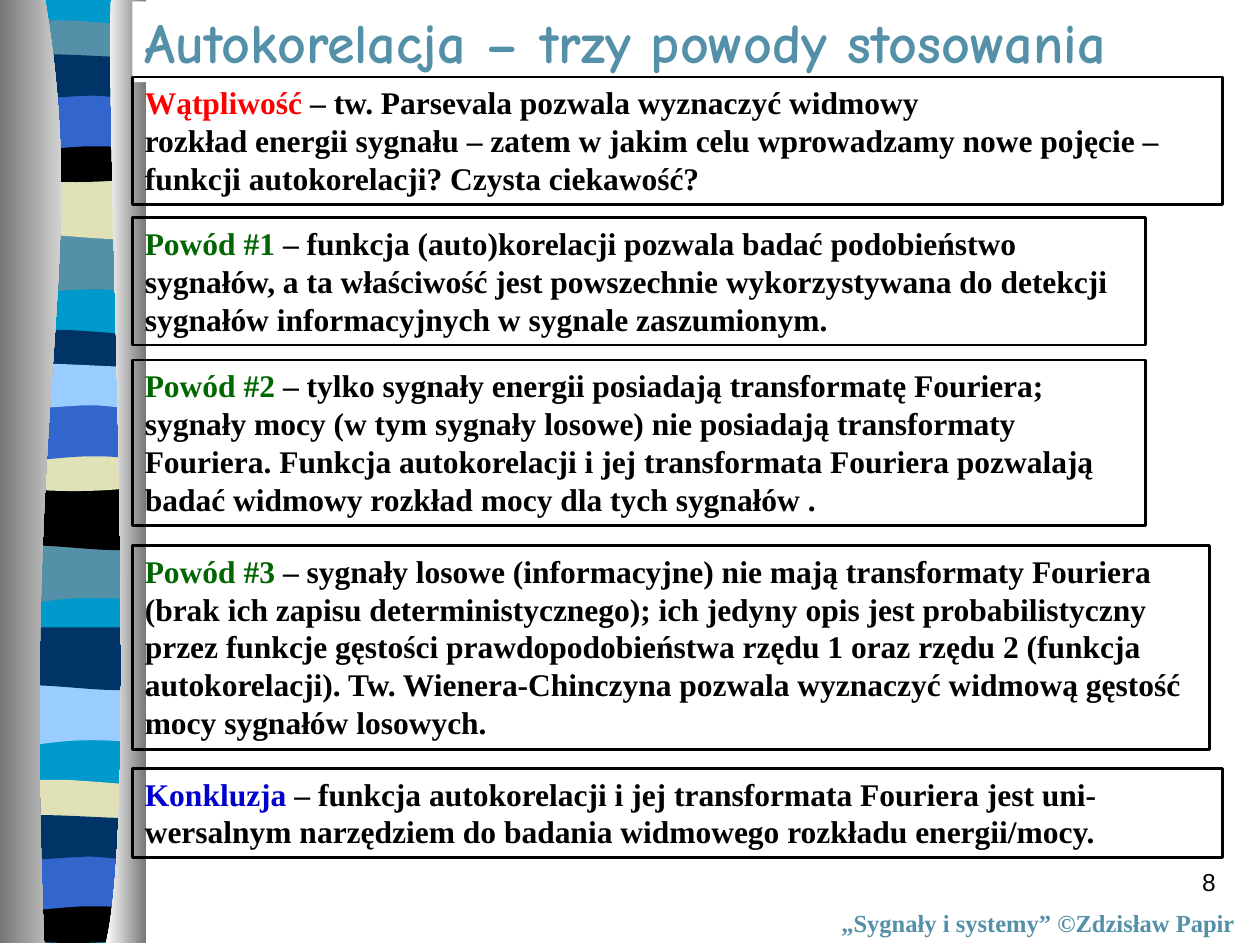
from lxml.etree import SubElement
from pptx import Presentation
from pptx.dml.color import RGBColor
from pptx.enum.text import MSO_AUTO_SIZE as AutoSize, PP_ALIGN as Align
from pptx.oxml.ns import qn
from pptx.util import Cm, Pt

WHITE = RGBColor(0xFF, 0xFF, 0xFF)
BLACK = RGBColor(0, 0, 0)
GREY = RGBColor(0x76, 0x76, 0x76)
CYAN = RGBColor(0x00, 0x99, 0xCC)
TEAL = RGBColor(0x54, 0x90, 0xA8)
SAND = RGBColor(0xE1, 0xE1, 0xB7)
BLUE = RGBColor(0x33, 0x66, 0xCC)
NAVY = RGBColor(0x00, 0x33, 0x66)
SKY = RGBColor(0x99, 0xCC, 0xFF)
RED = RGBColor(0xFF, 0, 0)
GREEN = RGBColor(0, 0x66, 0)
INDIGO = RGBColor(0, 0, 0xCC)

SERIF = "Times New Roman"
HEIGHT = 19.02  # height of the ornament, cm
WIDTH = 2.75  # width of a stripe, cm
FLAT = [(0, 0), (WIDTH, 0)]

# Stripe outlines in cm: top edge left to right, bottom edge right to left.
# Edges of more than two points are chains of Bezier curves.
STRIPES = {
    "slope": (FLAT, [(WIDTH, 1.19), (.86, .99), (.48, 1.4), (0, 1.19)]),
    "swell": (FLAT, [(WIDTH, 1.19), (2.29, 1.4), (.84, 1.07), (0, 1.19)]),
    "ribbon": ([(0, .1), (.18, 0), (.61, 0), (1.07, 0), (1.52, 0), (2.41, .1), (WIDTH, .1)],
               [(WIDTH, .74), (2.29, .84), (.46, .84), (0, .74)]),
    "bowl": ([(0, 0), (1.7, .13), (2.18, 0), (WIDTH, 0)],
             [(WIDTH, .81), (2.29, .97), (.46, .97), (0, .81)]),
    "arch": (FLAT, [(WIDTH, 1.19), (2.31, 1.07), (2.13, 1.07), (1.68, 1.07),
                    (1.22, 1.07), (.41, 1.19), (0, 1.19)]),
    "ripple": ([(0, .13), (.38, 0), (1.88, .13), (2.34, .13), (2.79, .13), (2.67, .13), (WIDTH, .13)],
               [(WIDTH, .91), (2.57, 1.04), (2.16, .91), (1.7, .91),
                (1.24, .91), (.28, 1.04), (0, .91)]),
}

# Three groups: left edge, then (top, colour) for each outline in order
GROUPS = [
    (.14, [(4.7, TEAL), (3.56, SAND), (.41, TEAL), (2.74, BLACK), (1.88, BLUE), (1.02, NAVY)]),
    (.12, [(10.92, TEAL), (9.83, BLACK), (6.65, NAVY), (8.97, SAND), (8.13, BLUE), (7.26, SKY)]),
    (.1, [(13.79, SKY), (12.65, NAVY), (15.72, SAND), (18.08, BLACK), (17.2, BLUE), (16.36, NAVY)]),
]

# Framed statements: top, width, height, keyword, keyword colour, text
STATEMENTS = [
    (1.55, 21.97, 2.57, "Wątpliwość", RED,
     " – tw. Parsevala pozwala wyznaczyć widmowy\nrozkład energii sygnału – zatem w jakim celu "
     "wprowadzamy nowe pojęcie – funkcji autokorelacji? Czysta ciekawość?"),
    (4.39, 20.42, 2.57, "Powód #1", GREEN,
     " – funkcja (auto)korelacji pozwala badać podobieństwo sygnałów, a ta właściwość jest "
     "powszechnie wykorzystywana do detekcji sygnałów informacyjnych w sygnale zaszumionym."),
    (7.26, 20.42, 3.33, "Powód #2", GREEN,
     " – tylko sygnały energii posiadają transformatę Fouriera; sygnały mocy (w tym sygnały losowe) "
     "nie posiadają transformaty Fouriera. Funkcja autokorelacji i jej transformata Fouriera "
     "pozwalają badać widmowy rozkład mocy dla tych sygnałów ."),
    (11, 21.72, 4.11, "Powód #3", GREEN,
     " – sygnały losowe (informacyjne) nie mają transformaty Fouriera (brak ich zapisu "
     "deterministycznego); ich jedyny opis jest probabilistyczny przez funkcje gęstości "
     "prawdopodobieństwa rzędu 1 oraz rzędu 2 (funkcja autokorelacji). Tw. Wienera-Chinczyna "
     "pozwala wyznaczyć widmową gęstość mocy sygnałów losowych."),
    (15.49, 21.97, 1.8, "Konkluzja", INDIGO,
     " – funkcja autokorelacji i jej transformata Fouriera jest uni-\nwersalnym narzędziem "
     "do badania widmowego rozkładu energii/mocy."),
]


def bend(shape, edges):
    """Turn the straight segments of the curved edges into Bezier curves."""
    lines = list(shape.element.iter(qn("a:lnTo")))
    index = 0  # first line after the current edge's starting point
    for edge in edges:
        if len(edge) > 2:
            for start in range(index, index + len(edge) - 1, 3):
                group = lines[start:start + 3]
                curve = group[0].getparent().makeelement(qn("a:cubicBezTo"))
                group[0].addprevious(curve)
                for line in group:
                    curve.append(line[0])
                    line.getparent().remove(line)
        index += len(edge)


def add_outline(page, edges, left=0, top=0):
    """Closed outline through the given edges, each straight or curved."""
    points = [(Cm(left + x), Cm(top + y)) for edge in edges for x, y in edge]
    builder = page.shapes.build_freeform(*points[0])
    builder.add_line_segments(points[1:])
    shape = builder.convert_to_shape()
    bend(shape, edges)
    shape.shadow.inherit = False
    shape.line.fill.background()
    return shape


def fill_solid(shape, colour):
    shape.fill.solid()
    shape.fill.fore_color.rgb = colour


def add_column(page, edge, side, colours):
    """Shaded column between a curved edge and a straight side."""
    shape = add_outline(page, [edge, [(side, HEIGHT), (side, 0)]])
    shape.fill.gradient()
    shape.fill.gradient_angle = 0
    for stop, colour, position in zip(shape.fill.gradient_stops, colours, (0, 1)):
        stop.color.rgb = colour
        stop.position = position


def add_ornament(page):
    base = add_outline(page, [FLAT, [(WIDTH, HEIGHT), (0, HEIGHT)]], .14)
    fill_solid(base, CYAN)
    for left, stripes in GROUPS:
        for edges, (top, colour) in zip(STRIPES.values(), stripes):
            fill_solid(add_outline(page, edges, left, top), colour)
    add_column(page, [(.91, 0), (1.83, 5.49), (.43, 7.52), (.89, HEIGHT)], 0, (GREY, WHITE))
    add_column(page, [(2.24, 0), (2.13, 3.18), (2.82, 16.41), (2.13, HEIGHT)], 2.95, (WHITE, GREY))


def add_text(page, box, spans, size, font, bold=True, wrap=True, align=Align.LEFT):
    """Text box with one paragraph of (text, colour) spans."""
    shape = page.shapes.add_textbox(*map(Cm, box))
    frame = shape.text_frame
    frame.word_wrap = wrap
    frame.auto_size = AutoSize.SHAPE_TO_FIT_TEXT
    para = frame.paragraphs[0]
    para.alignment = align
    para.font.size, para.font.name, para.font.bold = Pt(size), font, bold
    for text, colour in spans:
        for number, line in enumerate(text.split("\n")):
            if number:
                para.add_line_break()
            span = para.add_run()
            span.text = line
            span.font.color.rgb = colour
    return shape


def add_statement(page, box, keyword, colour, text):
    shape = add_text(page, box, [(keyword, colour), (text, BLACK)], 18, SERIF)
    shape.line.color.rgb = BLACK
    shape.line.width = Pt(1.5)


def add_footer(page):
    number = add_text(page, (19.48, 17.35, 5.28, 1.27), [("8", BLACK)], 14, "Arial",
                      bold=False, align=Align.RIGHT)
    number.text_frame.auto_size = AutoSize.NONE
    add_text(page, (16.71, 18.19, 8.66, .86),
             [("„Sygnały i systemy” ©Zdzisław Papir", TEAL)], 14, SERIF, wrap=False)


def main():
    deck = Presentation()
    deck.slide_width, deck.slide_height = Cm(25.4), Cm(19.05)
    page = deck.slides.add_slide(deck.slide_layouts[6])
    add_ornament(page)
    add_footer(page)
    title = add_text(page, (2.67, .03, 22.4, 1.63),
                     [("Autokorelacja – trzy powody stosowania", TEAL)], 32, "Comic Neue")
    fill_solid(title, WHITE)
    for top, width, height, *content in STATEMENTS:
        add_statement(page, (2.67, top, width, height), *content)
    deck.save("out.pptx")


if __name__ == "__main__":
    main()
